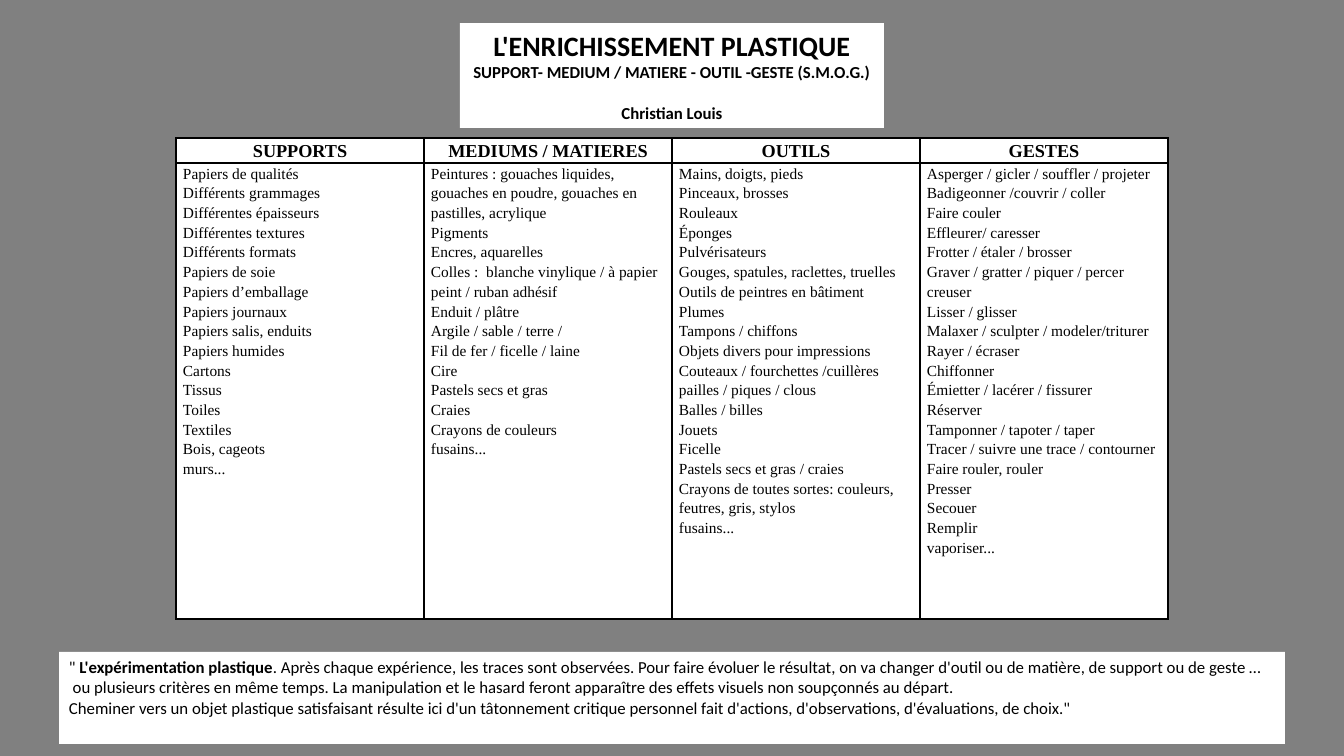
from lxml.etree import SubElement
from pptx import Presentation
from pptx.dml.color import RGBColor
from pptx.enum.shapes import MSO_SHAPE
from pptx.enum.text import MSO_ANCHOR, MSO_AUTO_SIZE, PP_ALIGN
from pptx.oxml.ns import qn
from pptx.util import Emu, Pt

PX = 914400 / 100.8
TITLE_ONLY = 5

HEADINGS = ["SUPPORTS", "MEDIUMS / MATIERES", "OUTILS", "GESTES"]
LISTS = [
    ["Papiers de qualités", "Différents grammages", "Différentes épaisseurs",
     "Différentes textures", "Différents formats", "Papiers de soie",
     "Papiers d’emballage", "Papiers journaux", "Papiers salis, enduits",
     "Papiers humides", "Cartons", "Tissus", "Toiles", "Textiles",
     "Bois, cageots", "murs..."],
    ["Peintures : gouaches liquides, gouaches en poudre, gouaches en pastilles, acrylique",
     "Pigments", "Encres, aquarelles",
     "Colles :  blanche vinylique / à papier peint / ruban adhésif",
     "Enduit / plâtre", "Argile / sable / terre /", "Fil de fer / ficelle / laine",
     "Cire", "Pastels secs et gras", "Craies", "Crayons de couleurs", "fusains..."],
    ["Mains, doigts, pieds", "Pinceaux, brosses", "Rouleaux", "Éponges",
     "Pulvérisateurs", "Gouges, spatules, raclettes, truelles",
     "Outils de peintres en bâtiment", "Plumes", "Tampons / chiffons",
     "Objets divers pour impressions",
     "Couteaux / fourchettes /cuillères pailles / piques / clous",
     "Balles / billes", "Jouets", "Ficelle", "Pastels secs et gras / craies",
     "Crayons de toutes sortes: couleurs, feutres, gris, stylos", "fusains..."],
    ["Asperger / gicler / souffler / projeter", "Badigeonner /couvrir / coller",
     "Faire couler", "Effleurer/ caresser", "Frotter / étaler / brosser",
     "Graver / gratter / piquer / percer creuser", "Lisser / glisser",
     "Malaxer / sculpter / modeler/triturer", "Rayer / écraser", "Chiffonner",
     "Émietter / lacérer / fissurer", "Réserver", "Tamponner / tapoter / taper",
     "Tracer / suivre une trace / contourner", "Faire rouler, rouler", "Presser",
     "Secouer", "Remplir", "vaporiser..."],
]


def px(value):
    return Emu(round(value * PX))


def color(value):
    return RGBColor.from_string(value)


def apply(target, values):
    for name, value in values.items():
        setattr(target, name, value)


class SlideBuilder:
    ink, paper, backdrop = "000000", "FFFFFF", "808080"
    sans, serif = "Calibri", "Times New Roman"

    def __init__(self, deck):
        self.page = deck.slides.add_slide(deck.slide_layouts[TITLE_ONLY])
        self.fill(self.page.background, self.backdrop)

    def fill(self, target, value):
        target.fill.solid()
        target.fill.fore_color.rgb = color(value)

    def add_text(self, frame, paragraphs, font):
        """Each paragraph is a list of (text, font values) and its format values."""
        for index, (spans, layout) in enumerate(paragraphs):
            para = frame.add_paragraph() if index else frame.paragraphs[0]
            apply(para, layout)
            for text, values in spans:
                span = para.add_run()
                span.text = text
                apply(span.font, {"name": font, "bold": False, **values})
                span.font.color.rgb = color(self.ink)

    def panel(self, box, bounds, paragraphs):
        apply(box, dict(zip(("left", "top", "width", "height"), map(px, bounds))))
        self.fill(box, self.paper)
        frame = box.text_frame
        apply(frame, {"word_wrap": False, "auto_size": MSO_AUTO_SIZE.NONE,
                      "vertical_anchor": MSO_ANCHOR.TOP})
        self.add_text(frame, paragraphs, self.sans)

    def title(self, bounds, paragraphs):
        self.panel(self.page.shapes.title, bounds, paragraphs)

    def note(self, bounds, paragraphs):
        box = self.page.shapes.add_shape(MSO_SHAPE.RECTANGLE, *map(px, bounds))
        box.shadow.inherit = False
        box.line.fill.background()
        self.panel(box, bounds, paragraphs)

    def border(self, cell):
        properties = cell._tc.get_or_add_tcPr()
        for position, side in enumerate(("lnL", "lnR", "lnT", "lnB")):
            line = SubElement(properties, qn(f"a:{side}"), w=str(Pt(1)))
            solid = SubElement(line, qn("a:solidFill"))
            SubElement(solid, qn("a:srgbClr"), val=self.ink)
            properties.insert(position, line)

    def table(self, bounds, row_heights, headings, lists):
        table = self.page.shapes.add_table(
            len(row_heights), len(headings), *map(px, bounds)).table
        apply(table, {"first_row": False, "horz_banding": False})
        for row, height in zip(table.rows, row_heights):
            row.height = px(height)
        for index, (heading, items) in enumerate(zip(headings, lists)):
            table.columns[index].width = px(bounds[2] / len(headings))
            heading_style = {"size": Pt(13), "bold": True}
            self.cell(table.cell(0, index), [heading], heading_style, PP_ALIGN.CENTER)
            self.cell(table.cell(1, index), items, {"size": Pt(11)}, PP_ALIGN.LEFT)

    def cell(self, cell, texts, values, alignment):
        apply(cell, {"margin_left": px(7), "margin_right": px(7),
                     "margin_top": 0, "margin_bottom": 0})
        self.fill(cell, self.paper)
        self.border(cell)
        layout = {"alignment": alignment, "line_spacing": 1.15}
        self.add_text(cell.text_frame, [([(text, values)], layout) for text in texts],
                      self.serif)


def main():
    deck = Presentation()
    deck.slide_width, deck.slide_height = px(1344), px(756)
    slide = SlideBuilder(deck)

    # Title panel
    centered = {"alignment": PP_ALIGN.CENTER}
    large, small = ({"size": Pt(size), "bold": True} for size in (20, 12))
    slide.title((460, 23, 424, 105), [
        ([("L'ENRICHISSEMENT PLASTIQUE", large)], centered),
        ([("SUPPORT- MEDIUM / MATIERE - OUTIL -GESTE (S.M.O.G.)", small)], centered),
        ([("Christian Louis", small)], {**centered, "space_before": Pt(14.6)}),
    ])

    # Table of supports, mediums, tools and gestures
    slide.table((176, 138, 992, 481), (25, 456), HEADINGS, LISTS)

    # Closing quotation
    plain = {"size": Pt(12)}
    left = {"alignment": PP_ALIGN.LEFT}
    slide.note((59, 652, 1226, 92), [
        ([('" ', plain), ("L'expérimentation plastique", small),
          (". Après chaque expérience, les traces sont observées. Pour faire évoluer "
           "le résultat, on va changer d'outil ou de matière, de support ou de geste …",
           plain)], left),
        ([(" ou plusieurs critères en même temps. La manipulation et le hasard feront "
           "apparaître des effets visuels non soupçonnés au départ.", plain)], left),
        ([("Cheminer vers un objet plastique satisfaisant résulte ici d'un tâtonnement "
           "critique personnel fait d'actions, d'observations, d'évaluations, de "
           'choix."', plain)], left),
    ])

    deck.save("out.pptx")


if __name__ == "__main__":
    main()
